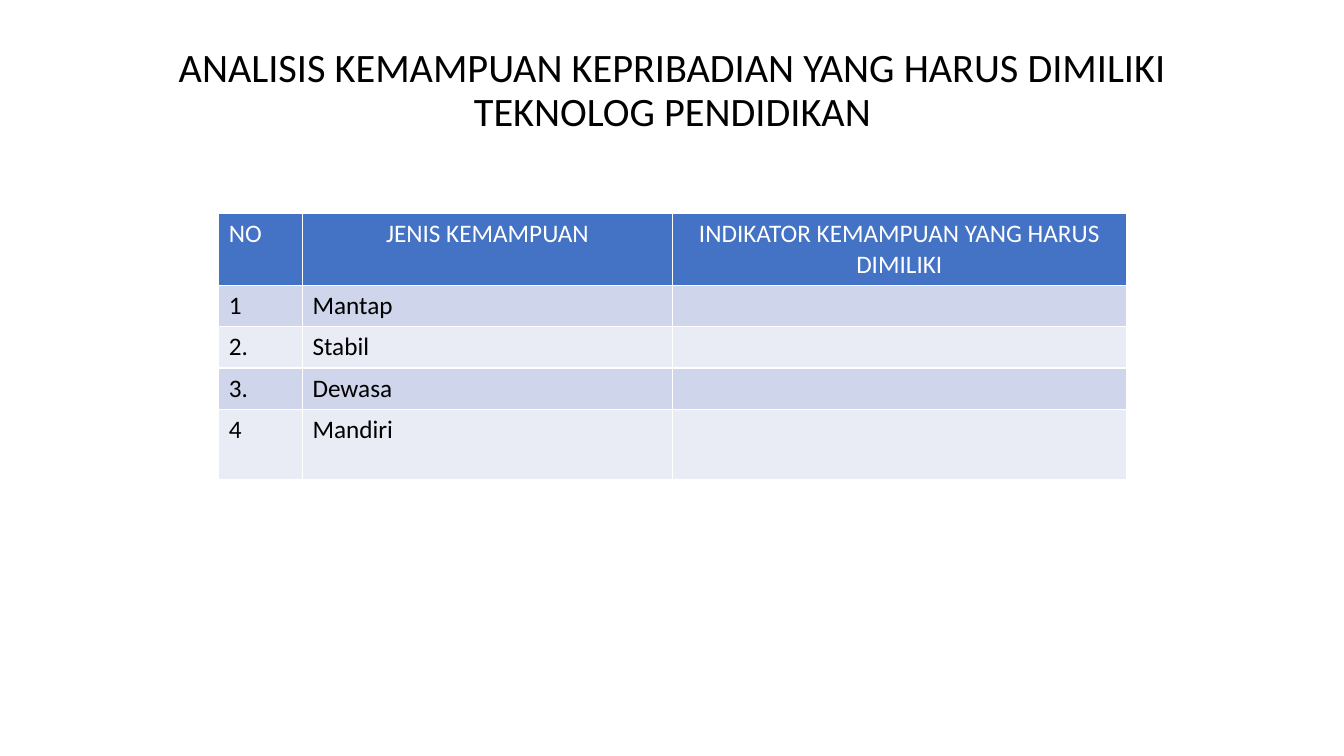
"""Build a slide with a table of personality abilities for education technologists."""
import pptx
import pptx.dml.color
import pptx.enum.text
import pptx.util

Inches = pptx.util.Inches
Pt = pptx.util.Pt
RGBColor = pptx.dml.color.RGBColor
PP_ALIGN = pptx.enum.text.PP_ALIGN

TITLE = "ANALISIS KEMAMPUAN KEPRIBADIAN YANG HARUS DIMILIKI TEKNOLOG PENDIDIKAN"
ABILITIES = [
    ("NO", "JENIS KEMAMPUAN", "INDIKATOR KEMAMPUAN YANG HARUS DIMILIKI"),
    ("1", "Mantap", ""),
    ("2.", "Stabil", ""),
    ("3.", "Dewasa", ""),
    ("4", "Mandiri", ""),
]
COLUMN_WIDTHS = [0.83, 3.67, 4.5]
ROW_HEIGHTS = [0.7, 0.41, 0.41, 0.41, 0.7]

FONT = "Calibri"
BLACK = RGBColor(0x00, 0x00, 0x00)
WHITE = RGBColor(0xFF, 0xFF, 0xFF)
HEADER_BLUE = RGBColor(0x44, 0x72, 0xC4)
BANDS = [RGBColor(0xE9, 0xEB, 0xF5), RGBColor(0xCF, 0xD5, 0xEA)]


def style_paragraph(paragraph, size, color, alignment):
    """Set the font and alignment of a paragraph."""
    paragraph.alignment = alignment
    paragraph.font.name = FONT
    paragraph.font.size = Pt(size)
    paragraph.font.bold = False
    paragraph.font.color.rgb = color


def add_title(slide):
    """Fill and place the title placeholder."""
    title = slide.shapes.title
    title.left, title.top = Inches(0.92), Inches(0.4)
    title.width, title.height = Inches(11.5), Inches(1.45)
    frame = title.text_frame
    frame.text = TITLE
    frame.word_wrap = True
    frame.auto_size = pptx.enum.text.MSO_AUTO_SIZE.NONE
    frame.vertical_anchor = pptx.enum.text.MSO_ANCHOR.MIDDLE
    frame.margin_bottom = Inches(0.49)
    paragraph = frame.paragraphs[0]
    paragraph.line_spacing = 0.9
    style_paragraph(paragraph, 28.8, BLACK, PP_ALIGN.CENTER)


def add_abilities(slide):
    """Add the table with a header row and banded rows."""
    table = slide.shapes.add_table(
        len(ABILITIES), len(COLUMN_WIDTHS), Inches(2.17), Inches(2.12),
        Inches(sum(COLUMN_WIDTHS)), Inches(sum(ROW_HEIGHTS))).table
    for column, width in zip(table.columns, COLUMN_WIDTHS):
        column.width = Inches(width)
    for row, height in zip(table.rows, ROW_HEIGHTS):
        row.height = Inches(height)
    for r, ability in enumerate(ABILITIES):
        is_header = r == 0
        for c, text in enumerate(ability):
            cell = table.cell(r, c)
            cell.text = text
            cell.fill.solid()
            cell.fill.fore_color.rgb = HEADER_BLUE if is_header else BANDS[r % 2]
            centered = is_header and c > 0
            style_paragraph(cell.text_frame.paragraphs[0], 18,
                            WHITE if is_header else BLACK,
                            PP_ALIGN.CENTER if centered else PP_ALIGN.LEFT)


def main():
    """Create the presentation and save it."""
    presentation = pptx.Presentation()
    presentation.slide_width = Inches(13.33)
    presentation.slide_height = Inches(7.5)
    slide = presentation.slides.add_slide(presentation.slide_layouts[5])
    add_title(slide)
    add_abilities(slide)
    presentation.save("out.pptx")


if __name__ == "__main__":
    main()
